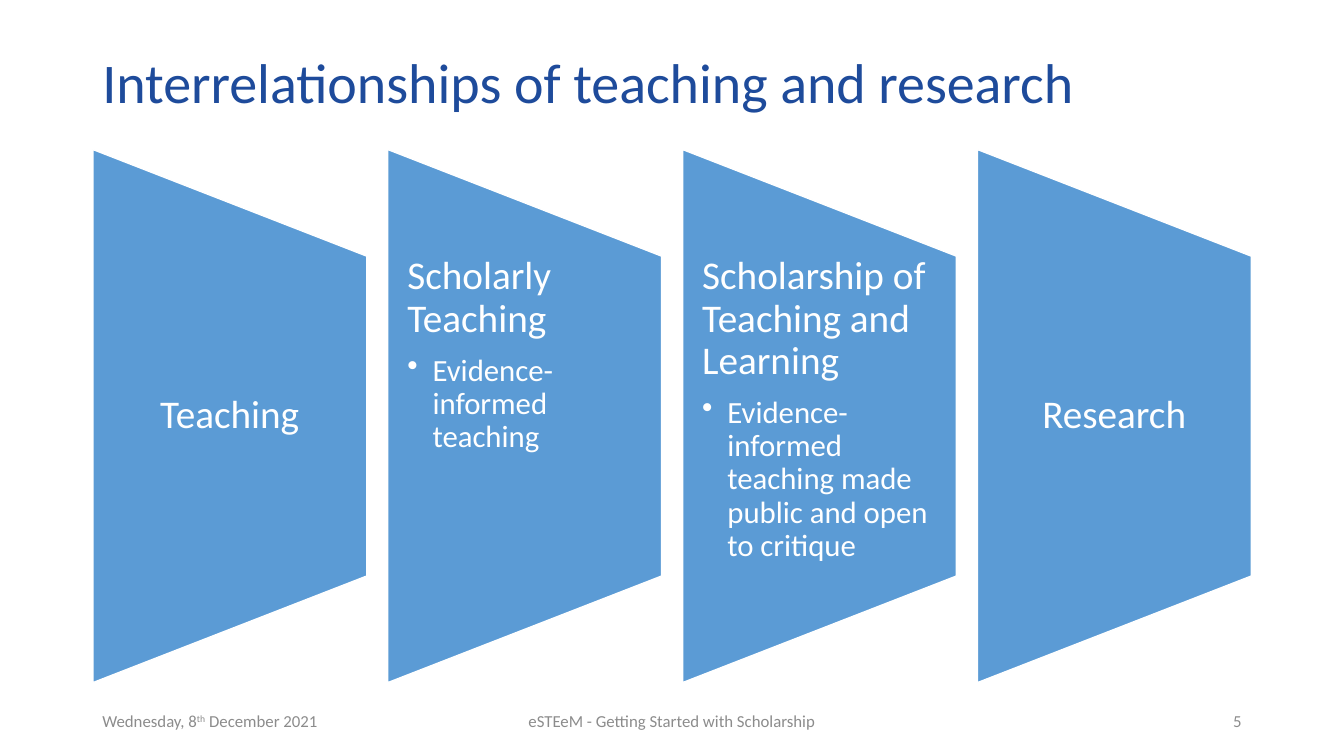
from lxml import etree
from pptx import Presentation
from pptx.dml.color import RGBColor
from pptx.enum.shapes import MSO_SHAPE
from pptx.enum.text import MSO_ANCHOR, PP_ALIGN
from pptx.oxml.ns import qn
from pptx.util import Pt

LEFT, CENTER, RIGHT = PP_ALIGN.LEFT, PP_ALIGN.CENTER, PP_ALIGN.RIGHT
TOP, MIDDLE = MSO_ANCHOR.TOP, MSO_ANCHOR.MIDDLE
TRAPEZOID = MSO_SHAPE.FLOWCHART_MANUAL_OPERATION

FONT = "Calibri"
WHITE, BLUE, NAVY, GREY = "FFFFFF", "5B9BD5", "1E4B9B", "8C8C8C"

STAGES = [
    ("Teaching", None),
    ("Scholarly Teaching", "Evidence-informed teaching"),
    ("Scholarship of Teaching and Learning",
     "Evidence-informed teaching made public and open to critique"),
    ("Research", None),
]


def color(code):
    return RGBColor.from_string(code)


def style(para, size, tint, align=LEFT):
    para.alignment = align
    for run in para.runs:
        run.font.name = FONT
        run.font.size = Pt(size)
        run.font.color.rgb = color(tint)


def text_box(slide, x, y, w, h, anchor=MIDDLE, insets=(7.2, 3.6, 7.2, 3.6)):
    box = slide.shapes.add_textbox(Pt(x), Pt(y), Pt(w), Pt(h))
    frame = box.text_frame
    frame.word_wrap = True
    frame.vertical_anchor = anchor
    (frame.margin_left, frame.margin_top,
     frame.margin_right, frame.margin_bottom) = [Pt(side) for side in insets]
    return frame


def add_bullet(para, indent):
    props = para._p.get_or_add_pPr()
    props.set("marL", str(Pt(indent)))
    props.set("indent", str(-Pt(indent)))
    etree.SubElement(props, qn("a:buChar")).set("char", "•")


def add_title(slide, x, y, w, h):
    frame = text_box(slide, x, y, w, h)
    frame.text = "Interrelationships of teaching and research"
    para = frame.paragraphs[0]
    para.line_spacing = 0.9
    style(para, 40, NAVY)


def add_stage(slide, x, y, w, h, head, detail):
    # Trapezoid turned on its side, about the centre of the box
    shape = slide.shapes.add_shape(
        TRAPEZOID, Pt(x + (w - h) / 2), Pt(y + (h - w) / 2), Pt(h), Pt(w))
    shape.rotation = 270
    shape.shadow.inherit = False
    shape.fill.solid()
    shape.fill.fore_color.rgb = color(BLUE)
    shape.line.color.rgb = color(WHITE)
    shape.line.width = Pt(1)

    # Upright text over the middle three fifths
    frame = text_box(slide, x, y + h / 5, w, h * 3 / 5,
                     TOP if detail else MIDDLE, (14, 0, 14.2, 0))
    frame.text = head
    para = frame.paragraphs[0]
    para.line_spacing = 0.9
    para.space_after = Pt(9.8)
    style(para, 28, WHITE, LEFT if detail else CENTER)
    if detail:
        para = frame.add_paragraph()
        para.text = detail
        para.level = 1
        add_bullet(para, 18)
        para.line_spacing = 0.9
        para.space_after = Pt(3.3)
        style(para, 22, WHITE)


def add_stages(slide, x, y, w, h):
    gap = 15
    width = (w - gap * (len(STAGES) - 1)) / len(STAGES)
    for i, (head, detail) in enumerate(STAGES):
        add_stage(slide, x + i * (width + gap), y, width, h, head, detail)


def add_footer(slide, x, y, w, h):
    side, mid = 216, 324
    # Date with a raised ordinal
    para = text_box(slide, x, y, side, h).paragraphs[0]
    for part in ("Wednesday, 8", "th", " December 2021"):
        para.add_run().text = part
    para.runs[1]._r.get_or_add_rPr().set("baseline", "30000")
    style(para, 12, GREY)

    # Event name and page number
    for left, width, words, align in (
            (x + (w - mid) / 2, mid,
             "eSTEeM - Getting Started with Scholarship", CENTER),
            (x + w - side, side, "5", RIGHT)):
        frame = text_box(slide, left, y, width, h)
        frame.text = words
        style(frame.paragraphs[0], 12, GREY, align)


def main():
    deck = Presentation()
    deck.slide_width, deck.slide_height = Pt(960), Pt(540)
    slide = deck.slides.add_slide(deck.slide_layouts[6])
    add_title(slide, 66, 28.8, 828, 64.8)
    add_stages(slide, 66.4, 106.8, 827.4, 380.8)
    add_footer(slide, 66, 500.5, 828, 28.8)
    deck.save("out.pptx")


if __name__ == "__main__":
    main()
